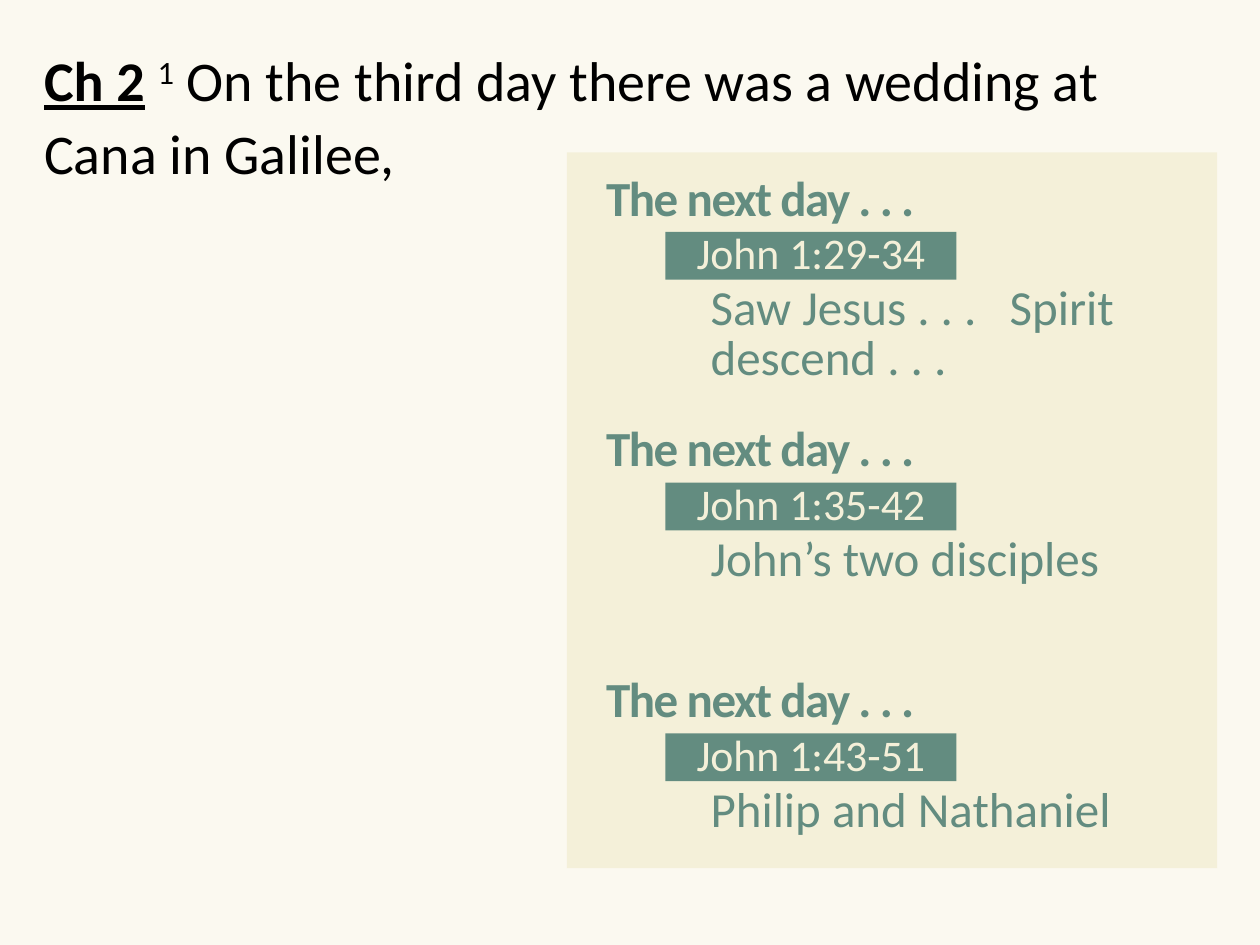
import pptx
import pptx.util
import pptx.dml.color
import pptx.enum.shapes
import pptx.enum.text

WIDTH, HEIGHT = 10, 7.5
PAPER, CREAM, GREEN, BLACK = "FBF9F0", "F4F0D9", "638C80", "000000"
FONT = "Calibri"
FIRST_ROW, ROW_PITCH = 1.38, 1.99
HEADING_LEFT, VERSE_LEFT, EVENT_LEFT = 4.81, 5.28, 5.64
DAYS = [
    ("John 1:29-34", "Saw Jesus . . .   Spirit descend . . .", 0.8),
    ("John 1:35-42", "John’s two disciples", 0.4),
    ("John 1:43-51", "Philip and Nathaniel", 0.4),
]


def paint(color_format, hex_color):
    color_format.rgb = pptx.dml.color.RGBColor.from_string(hex_color)


def inches(*lengths):
    return [pptx.util.Inches(length) for length in lengths]


def add_panel(shapes, left, top, width, height, color):
    panel = shapes.add_shape(
        pptx.enum.shapes.MSO_SHAPE.RECTANGLE, *inches(left, top, width, height)
    )
    panel.shadow.inherit = False
    panel.fill.solid()
    paint(panel.fill.fore_color, color)
    panel.line.fill.background()
    return panel


def write(frame, runs, line_spacing=0.9, centred=False, anchor="TOP"):
    frame.word_wrap = True
    frame.margin_left = frame.margin_right = 0
    frame.margin_top = frame.margin_bottom = 0
    frame.vertical_anchor = pptx.enum.text.MSO_ANCHOR[anchor]
    paragraph = frame.paragraphs[0]
    paragraph.line_spacing = line_spacing
    paragraph.alignment = pptx.enum.text.PP_ALIGN.CENTER if centred else pptx.enum.text.PP_ALIGN.LEFT
    for text, style in runs:
        add_run(paragraph, text, **style)


def add_run(paragraph, text, size=28, color=GREEN, bold=False, underline=False,
            baseline=0, spacing=0):
    run = paragraph.add_run()
    run.text = text
    run.font.name = FONT
    run.font.size = pptx.util.Pt(size)
    run.font.bold = bold
    run.font.underline = underline
    paint(run.font.color, color)
    properties = run.font._element
    if baseline:
        properties.set("baseline", str(baseline * 1000))
    if spacing:
        properties.set("spc", str(round(spacing * 100)))


def add_text(shapes, left, top, width, height, runs, **layout):
    box = shapes.add_textbox(*inches(left, top, width, height))
    write(box.text_frame, runs, **layout)


def add_day(shapes, top, verse, event, event_height):
    verse_label = add_panel(shapes, VERSE_LEFT, top + 0.46, 2.31, 0.38, GREEN)
    write(verse_label.text_frame, [(verse, {"size": 25, "color": CREAM})], centred=True)
    add_text(shapes, HEADING_LEFT, top, 3.18, 0.42,
             [("The next day . . .", {"bold": True, "spacing": -0.8})])
    add_text(shapes, EVENT_LEFT, top + 0.89, 3.6, event_height,
             [(event, {})], line_spacing=0.85)


def main():
    deck = pptx.Presentation()
    deck.slide_width, deck.slide_height = inches(WIDTH, HEIGHT)
    slide = deck.slides.add_slide(deck.slide_layouts[6])
    slide.background.fill.solid()
    paint(slide.background.fill.fore_color, PAPER)

    verse_style = {"size": 32, "color": BLACK}
    add_text(slide.shapes, 0.35, 0.32, 9.31, 1.14, [
        ("Ch 2", {**verse_style, "bold": True, "underline": True}),
        (" ", verse_style),
        ("1", {**verse_style, "baseline": 30}),
        (" On the third day there was a wedding at Cana in Galilee,", verse_style),
    ], line_spacing=1.08)

    timeline = slide.shapes.add_group_shape().shapes
    add_panel(timeline, 4.5, 1.21, 5.16, 5.68, CREAM)
    for row, day in enumerate(DAYS):
        add_day(timeline, FIRST_ROW + row * ROW_PITCH, *day)

    deck.save("out.pptx")


if __name__ == "__main__":
    main()
